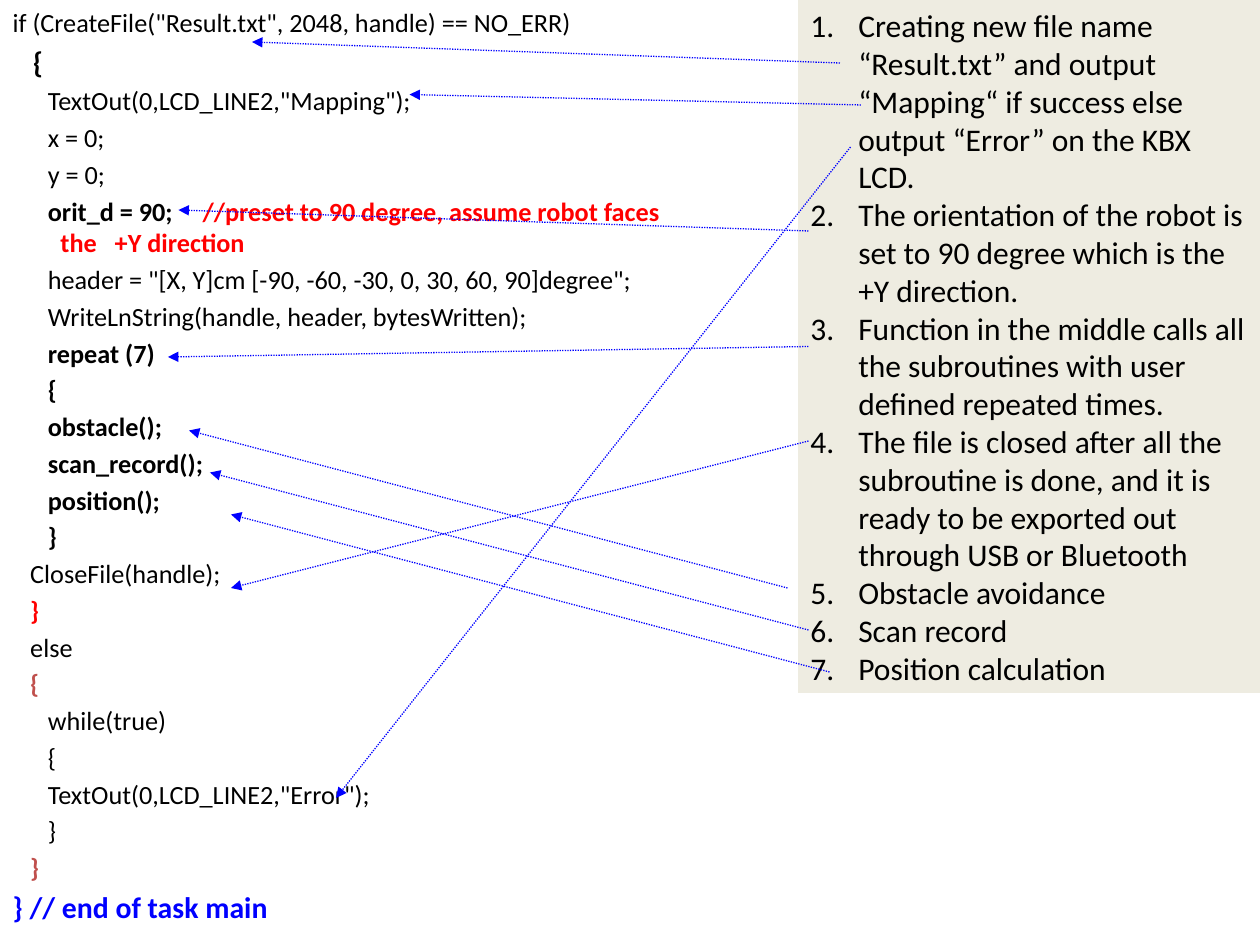
from lxml.etree import SubElement
from pptx import Presentation
from pptx.dml.color import RGBColor
from pptx.enum.dml import MSO_LINE
from pptx.enum.shapes import MSO_CONNECTOR, MSO_SHAPE
from pptx.enum.text import MSO_ANCHOR, MSO_AUTO_SIZE, PP_ALIGN
from pptx.oxml.ns import qn
from pptx.util import Inches, Pt

BLACK, RED, BRICK, BLUE, CREAM = "000000", "FF0000", "C0504D", "0000FF", "EEECE1"
CELL = Inches(1) // 12
HANGING = 0.38
STEP = 0.14


def add_span(para, text, size, color=BLACK, bold=False, spacing=0):
    span = para.add_run()
    span.text = text
    span.font.name = "Calibri"
    span.font.size = Pt(size)
    span.font.bold = bold
    span.font.color.rgb = RGBColor.from_string(color)
    if spacing:
        span._r.get_or_add_rPr().set("spc", str(round(spacing * 100)))


def set_indent(para, first_line):
    para.alignment = PP_ALIGN.LEFT
    properties = para._p.get_or_add_pPr()
    properties.set("marL", str(Inches(HANGING)))
    properties.set("indent", str(Inches(first_line - HANGING)))
    return properties


deck = Presentation()
deck.slide_width, deck.slide_height = 120 * CELL, 90 * CELL
page = deck.slides.add_slide(deck.slide_layouts[1])
title = page.shapes.title
title._element.getparent().remove(title._element)

code_lines = [
    (0, [('if (CreateFile("Result.txt", 2048, handle) == NO_ERR)', 15)]),
    (1.15, [("{", 17, BLACK, True)]),
    (2, [('TextOut(0,LCD_LINE2,"Mapping");', 15)]),
    (2, [("x = 0;", 15)]),
    (2, [("y = 0;", 15)]),
    (2, [("orit_d = 90;", 15, BLACK, True),
         (" ", 15, BLACK, True, 13.6),
         ("//preset to 90 degree, assume robot faces the", 15, RED, True),
         (" ", 15, RED, True, 6.8),
         ("+Y direction", 15, RED, True)]),
    (2, [('header = "[X, Y]cm [-90, -60, -30, 0, 30, 60, 90]degree";', 15)]),
    (2, [("WriteLnString(handle, header, bytesWritten);", 15)]),
    (2, [("repeat (7)", 15, BLACK, True)]),
    (2, [("{", 15, BLACK, True)]),
    (2, [("obstacle();", 15, BLACK, True)]),
    (2, [("scan_record();", 15, BLACK, True)]),
    (2, [("position();", 15, BLACK, True)]),
    (2, [("}", 15, BLACK, True)]),
    (1, [("CloseFile(handle);", 15)]),
    (1, [("}", 15, RED, True)]),
    (1, [("else", 15)]),
    (1, [("{", 15, BRICK, True)]),
    (2, [("while(true)", 15)]),
    (2, [("{", 15)]),
    (2, [('TextOut(0,LCD_LINE2,"Error");', 15)]),
    (2, [("}", 15)]),
    (1, [("}", 15, BRICK, True)]),
    (0, [("} // end of task main", 17, BLUE, True)]),
]
code = page.placeholders[1]
code.left, code.top, code.width, code.height = 0, 0, 66 * CELL, 90 * CELL
frame = code.text_frame
frame.word_wrap = True
frame.auto_size = MSO_AUTO_SIZE.NONE
frame.vertical_anchor = MSO_ANCHOR.TOP
for number, (level, spans) in enumerate(code_lines):
    para = frame.add_paragraph() if number else frame.paragraphs[0]
    properties = set_indent(para, level * STEP)
    SubElement(properties, qn("a:buNone"))
    for span in spans:
        add_span(para, *span)

notes = [
    "Creating new file name “Result.txt” and output “Mapping“ if success else output “Error” on the KBX LCD.",
    "The orientation of the robot is set to 90 degree which is the +Y direction.",
    "Function in the middle calls all the subroutines with user defined repeated times.",
    "The file is closed after all the subroutine is done, and it is ready to be exported out through USB or Bluetooth",
    "Obstacle avoidance",
    "Scan record",
    "Position calculation",
]
box = page.shapes.add_shape(MSO_SHAPE.RECTANGLE, 76 * CELL, 0, 44 * CELL, 66 * CELL)
box.shadow.inherit = False
box.fill.solid()
box.fill.fore_color.rgb = RGBColor.from_string(CREAM)
box.line.fill.background()
frame = box.text_frame
frame.word_wrap = True
frame.auto_size = MSO_AUTO_SIZE.SHAPE_TO_FIT_TEXT
frame.vertical_anchor = MSO_ANCHOR.TOP
for number, note in enumerate(notes):
    para = frame.add_paragraph() if number else frame.paragraphs[0]
    properties = set_indent(para, 0)
    SubElement(properties, qn("a:buFont"), typeface="+mj-lt")
    SubElement(properties, qn("a:buAutoNum"), type="arabicPeriod")
    add_span(para, note, 18)

arrows = [
    (80, 6, 24, 4), (81, 14, 32, 76), (82, 10, 39, 9),
    (77, 22, 17, 20), (77, 33, 16, 34), (77, 42, 22, 56),
    (75, 56, 18, 41), (77, 60, 20, 45), (79, 64, 22, 49),
]
for ends in arrows:
    arrow = page.shapes.add_connector(MSO_CONNECTOR.STRAIGHT, *(end * CELL for end in ends))
    arrow.line.color.rgb = RGBColor.from_string(BLUE)
    arrow.line.width = Pt(0.75)
    arrow.line.dash_style = MSO_LINE.ROUND_DOT
    SubElement(arrow.line._get_or_add_ln(), qn("a:tailEnd"), type="triangle")
    SubElement(arrow._element.spPr, qn("a:effectLst"))

deck.save("out.pptx")
